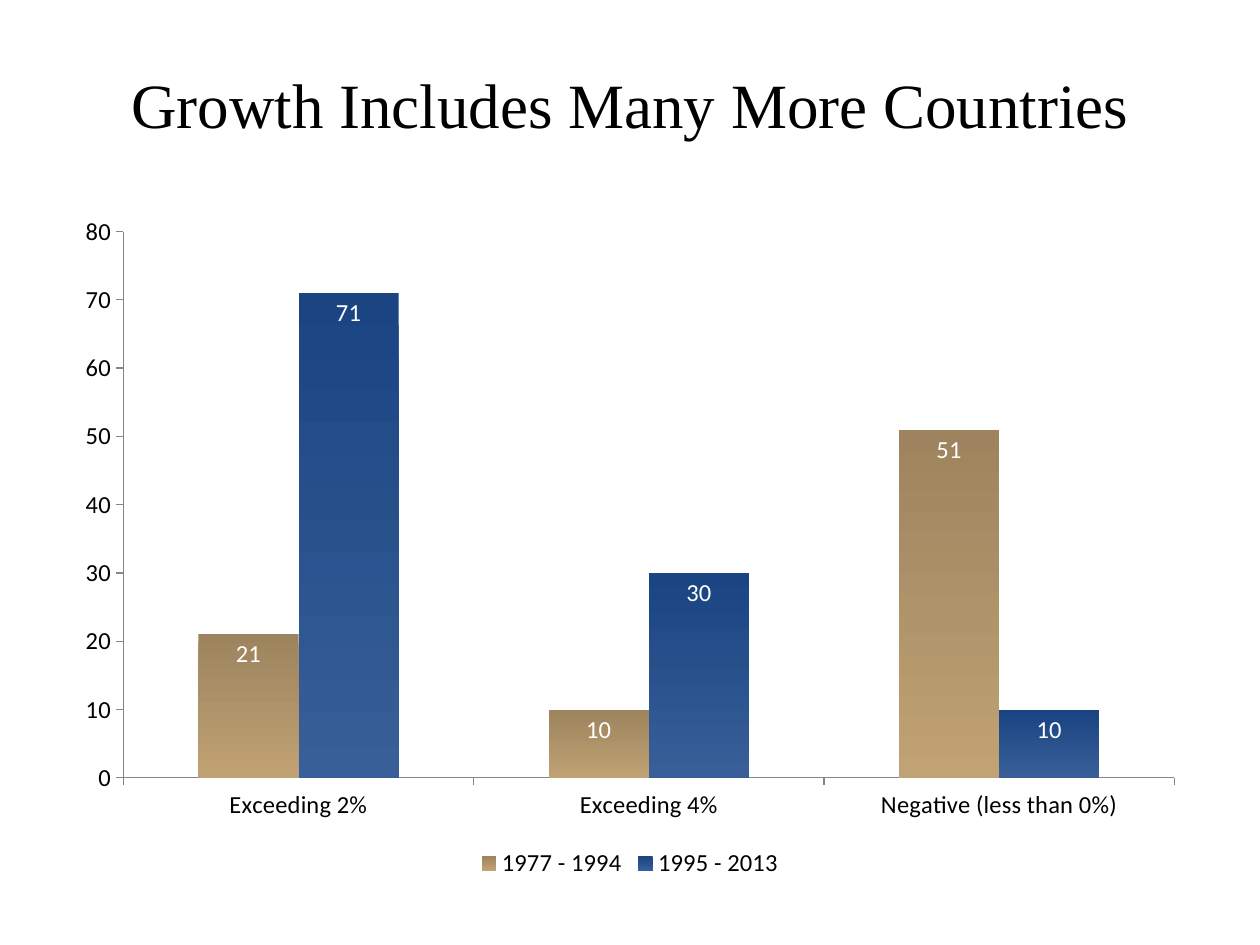
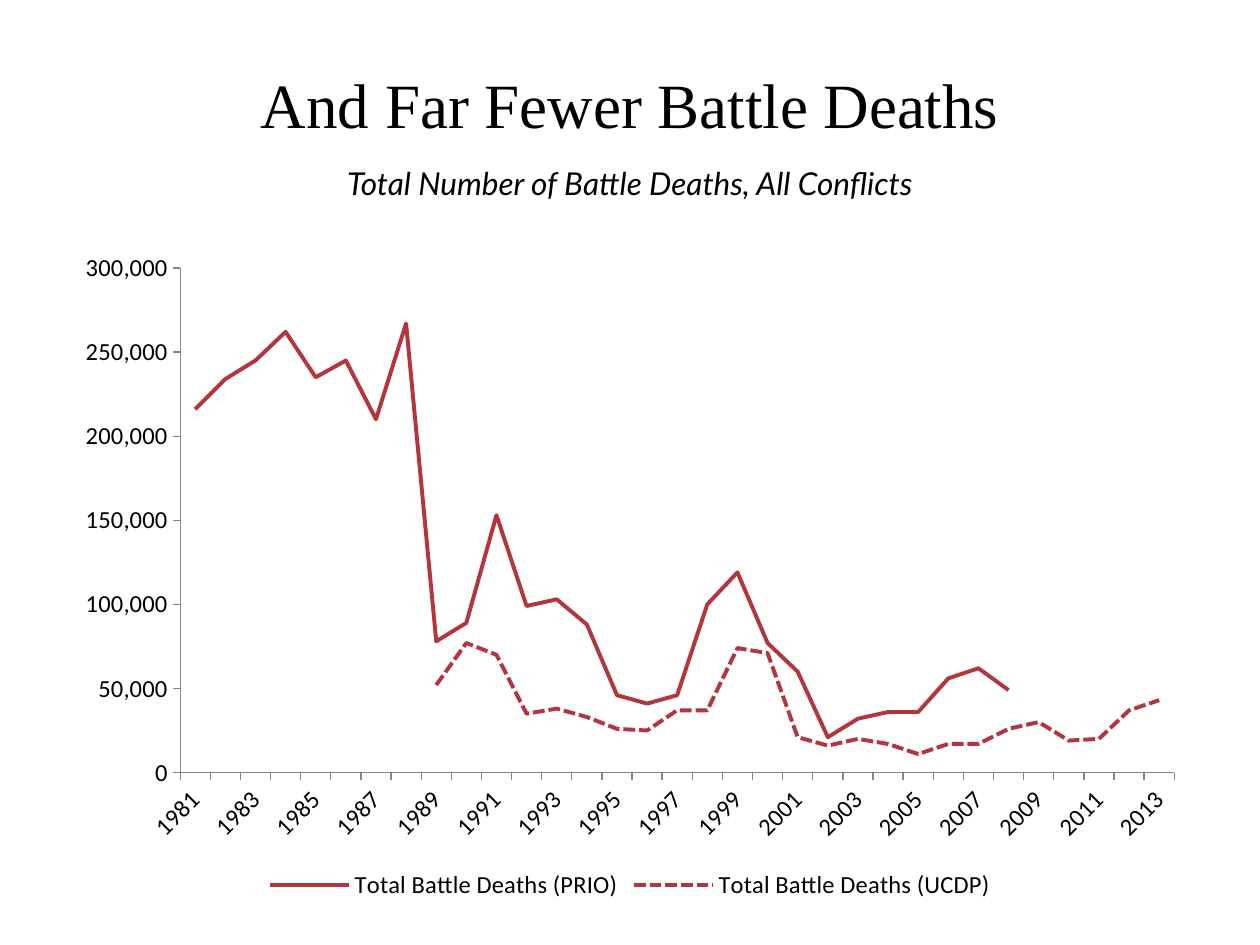
from lxml.etree import SubElement
from pptx import Presentation
from pptx.chart.data import CategoryChartData
from pptx.dml.color import RGBColor
from pptx.enum.chart import XL_CHART_TYPE, XL_LABEL_POSITION, XL_LEGEND_POSITION, XL_TICK_MARK
from pptx.enum.dml import MSO_LINE
from pptx.enum.text import MSO_ANCHOR, PP_ALIGN
from pptx.oxml.ns import qn
from pptx.util import Cm, Pt

BLACK, WHITE, AXIS_GREY, RED = "000000", "FFFFFF", "868686", "B3353D"
TITLE_FONT, SUBTITLE_FONT, CHART_FONT = "Times New Roman", "Lato", "Calibri"
LEFT, WIDTH = 1.27, 22.86
TITLE_BOX = (LEFT, 0.76, WIDTH, 2.64)
SUBTITLE_BOX = (LEFT, 3.18, WIDTH, 1.32)
GROWTH_BOX = (LEFT, 4.09, WIDTH, 13.72)
DEATHS_BOX = (LEFT, 4.83, WIDTH, 13.41)

GROWTH_CATEGORIES = ["Exceeding 2%", "Exceeding 4%", "Negative (less than 0%)"]
GROWTH = {"1977 - 1994": [21, 10, 51], "1995 - 2013": [71, 30, 10]}
GROWTH_GRADIENTS = [("9D845E", "C0A274"), ("1A4482", "385F98")]

YEARS = [str(year) for year in range(1981, 2014)]
PRIO = [216000, 234000, 245000, 262000, 235000, 245000, 210000, 267000, 78000, 89000,
        153000, 99000, 103000, 88000, 46000, 41000, 46000, 100000, 119000, 77000,
        60000, 21000, 32000, 36000, 36000, 56000, 62000, 49000]
UCDP = [52000, 77000, 70000, 35000, 38000, 33000, 26000, 25000, 37000, 37000, 74000,
        71000, 21000, 16000, 20000, 17000, 11000, 17000, 17000, 26000, 30000, 19000,
        20000, 37000, 43000]
DEATHS = {
    "Total Battle Deaths (PRIO)": PRIO + [None] * (len(YEARS) - len(PRIO)),
    "Total Battle Deaths (UCDP)": [None] * (len(YEARS) - len(UCDP)) + UCDP,
}


def rgb(value):
    return RGBColor.from_string(value)


def lengths(box):
    return [Cm(value) for value in box]


def style_font(font, name=CHART_FONT, size=14, color=BLACK, italic=False):
    font.name, font.size, font.italic = name, Pt(size), italic
    font.color.rgb = rgb(color)


def write(tf, text, anchor=MSO_ANCHOR.TOP, **style):
    tf.word_wrap = True
    tf.vertical_anchor = anchor
    p = tf.paragraphs[0]
    p.alignment = PP_ALIGN.CENTER
    r = p.add_run()
    r.text = text
    style_font(r.font, **style)


def add_titled_slide(prs, title):
    s = prs.slides.add_slide(prs.slide_layouts[5])
    sp = s.shapes.title
    sp.left, sp.top, sp.width, sp.height = lengths(TITLE_BOX)
    write(sp.text_frame, title, anchor=MSO_ANCHOR.MIDDLE, name=TITLE_FONT, size=36)
    return s


def add_subtitle(s, box, text):
    sp = s.shapes.add_textbox(*lengths(box))
    write(sp.text_frame, text, name=SUBTITLE_FONT, size=18, italic=True)


def add_base_chart(s, box, kind, categories, series, top_value, step, number_format):
    data = CategoryChartData()
    data.categories = categories
    for name, values in series.items():
        data.add_series(name, values)
    chart = s.shapes.add_chart(kind, *lengths(box), data).chart
    style_font(chart.font)
    chart.has_title = False
    chart.has_legend = True
    chart.legend.position = XL_LEGEND_POSITION.BOTTOM
    chart.legend.include_in_layout = False
    for axis in (chart.category_axis, chart.value_axis):
        axis.has_major_gridlines = False
        axis.major_tick_mark = XL_TICK_MARK.OUTSIDE
        axis.minor_tick_mark = XL_TICK_MARK.NONE
        axis.format.line.color.rgb = rgb(AXIS_GREY)
        axis.format.line.width = Pt(0.75)
        style_font(axis.tick_labels.font)
    value_axis = chart.value_axis
    value_axis.minimum_scale, value_axis.maximum_scale = 0, top_value
    value_axis.major_unit = step
    value_axis.tick_labels.number_format = number_format
    value_axis.tick_labels.number_format_is_linked = False
    chart.plots[0].vary_by_categories = False
    return chart


def add_growth_chart(s, box):
    chart = add_base_chart(s, box, XL_CHART_TYPE.COLUMN_CLUSTERED,
                           GROWTH_CATEGORIES, GROWTH, 80, 10, "General")
    plot = chart.plots[0]
    plot.gap_width, plot.overlap = 150, 0
    for series, colors in zip(plot.series, GROWTH_GRADIENTS):
        fill = series.format.fill
        fill.gradient()
        fill.gradient_angle = 270
        for position, (stop, color) in enumerate(zip(fill.gradient_stops, colors)):
            stop.position = position
            stop.color.rgb = rgb(color)
        labels = series.data_labels
        labels.show_value = True
        labels.position = XL_LABEL_POSITION.INSIDE_END
        style_font(labels.font, color=WHITE)


def slant_alternate_labels(axis):
    element = axis._element
    body = element.find(qn("c:txPr")).find(qn("a:bodyPr"))
    body.set("rot", str(-45 * 60000))
    body.set("vert", "horz")
    skip = SubElement(element, qn("c:tickLblSkip"))
    skip.set("val", "2")
    element.find(qn("c:lblOffset")).addnext(skip)


def add_deaths_chart(s, box):
    chart = add_base_chart(s, box, XL_CHART_TYPE.LINE, YEARS, DEATHS,
                           300000, 50000, "#,##0")
    slant_alternate_labels(chart.category_axis)
    for series, dash in zip(chart.plots[0].series, (MSO_LINE.SOLID, MSO_LINE.SQUARE_DOT)):
        series.smooth = False
        line = series.format.line
        line.color.rgb = rgb(RED)
        line.width = Pt(2.25)
        line.dash_style = dash


def main():
    prs = Presentation()
    prs.slide_width, prs.slide_height = Cm(25.4), Cm(19.05)

    s = add_titled_slide(prs, "Growth Includes Many More Countries")
    add_growth_chart(s, GROWTH_BOX)

    s = add_titled_slide(prs, "And Far Fewer Battle Deaths")
    add_subtitle(s, SUBTITLE_BOX, "Total Number of Battle Deaths, All Conflicts")
    add_deaths_chart(s, DEATHS_BOX)

    prs.save("out.pptx")


if __name__ == "__main__":
    main()
